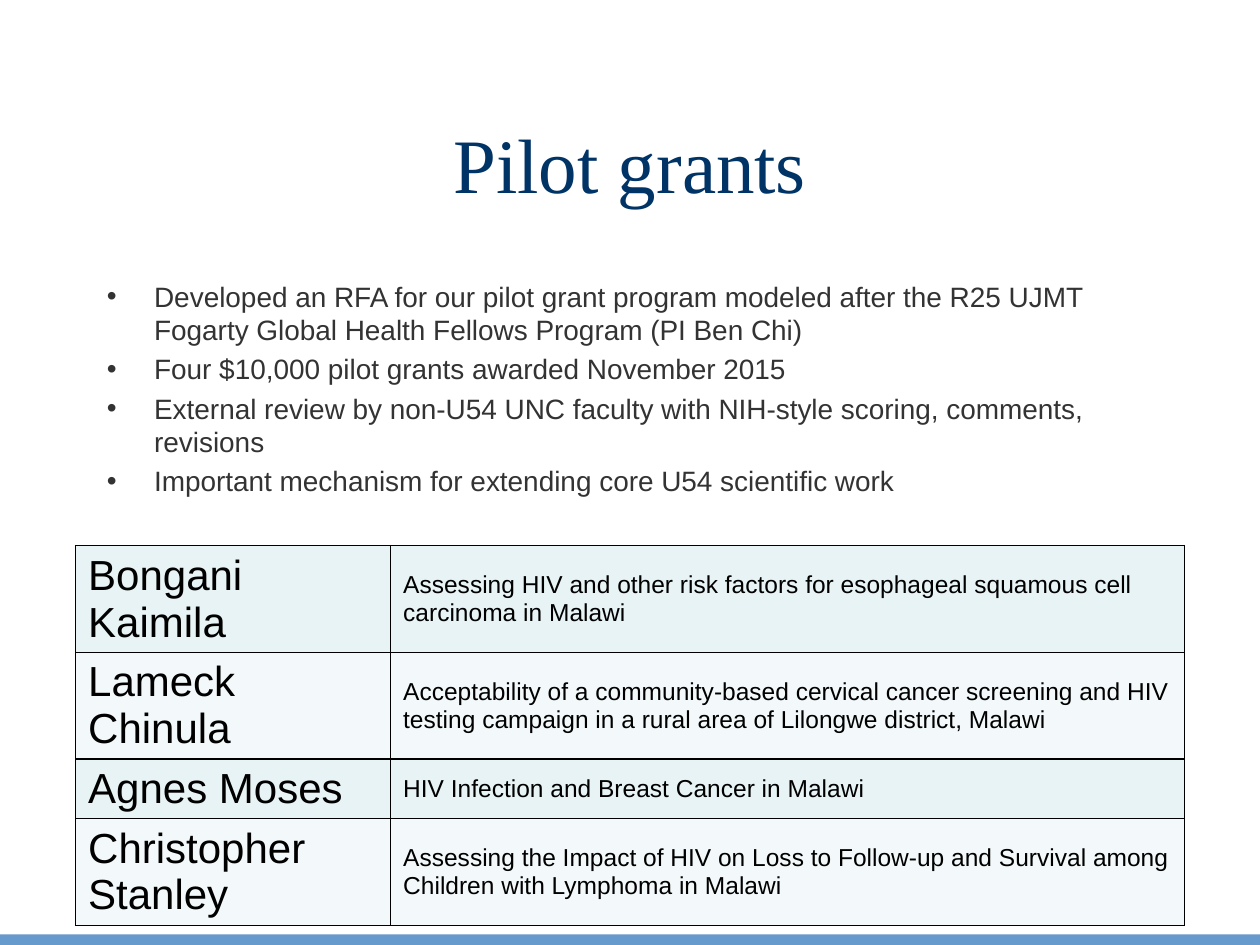
from lxml import etree
from pptx import Presentation
from pptx.dml.color import RGBColor
from pptx.enum.shapes import MSO_SHAPE
from pptx.enum.text import MSO_ANCHOR, PP_ALIGN
from pptx.oxml.ns import qn
from pptx.util import Pt

RECTANGLE = MSO_SHAPE.RECTANGLE
MIDDLE = MSO_ANCHOR.MIDDLE
CENTER = PP_ALIGN.CENTER
TITLE_ONLY = 5

WIDTH, HEIGHT = 720, 540
GOALS = [
    "Developed an RFA for our pilot grant program modeled after the R25 UJMT "
    "Fogarty Global Health Fellows Program (PI Ben Chi)",
    "Four $10,000 pilot grants awarded November 2015",
    "External review by non-U54 UNC faculty with NIH-style scoring, comments, revisions",
    "Important mechanism for extending core U54 scientific work",
]
GRANTS = [
    ("Bongani Kaimila",
     "Assessing HIV and other risk factors for esophageal squamous cell carcinoma in Malawi"),
    ("Lameck Chinula",
     "Acceptability of a community-based cervical cancer screening and HIV testing "
     "campaign in a rural area of Lilongwe district, Malawi"),
    ("Agnes Moses", "HIV Infection and Breast Cancer in Malawi"),
    ("Christopher Stanley",
     "Assessing the Impact of HIV on Loss to Follow-up and Survival among Children "
     "with Lymphoma in Malawi"),
]


def color(hex_string):
    return RGBColor.from_string(hex_string)


def add_solid_fill(parent, hex_string):
    fill = etree.SubElement(parent, qn("a:solidFill"))
    etree.SubElement(fill, qn("a:srgbClr"), val=hex_string)


class GrantSlide:
    title_font, body_font = "Times New Roman", "Arial"
    title_color, body_color, table_color = "003366", "333333", "000000"
    bar_color = "6699CC"
    row_fills = ("E7F3F4", "F3F9FA")
    cell_margin = 1.5

    def __init__(self, presentation):
        self.slide = presentation.slides.add_slide(presentation.slide_layouts[TITLE_ONLY])

    def style(self, paragraph, font_name, size, hex_string):
        for run in paragraph.runs:
            run.font.name = font_name
            run.font.size = Pt(size)
            run.font.color.rgb = color(hex_string)

    def bar(self, left, top, width, height):
        bar = self.slide.shapes.add_shape(RECTANGLE, Pt(left), Pt(top), Pt(width), Pt(height))
        bar.shadow.inherit = False
        bar.fill.solid()
        bar.fill.fore_color.rgb = color(self.bar_color)
        bar.line.fill.background()

    def title(self, text, left, top, width, height):
        title = self.slide.shapes.title
        title.left, title.top, title.width, title.height = map(Pt, (left, top, width, height))
        title.text_frame.text = text
        title.text_frame.vertical_anchor = MIDDLE
        heading = title.text_frame.paragraphs[0]
        heading.alignment = CENTER
        self.style(heading, self.title_font, 44, self.title_color)

    def bullets(self, items, left, top, width, height):
        box = self.slide.shapes.add_textbox(Pt(left), Pt(top), Pt(width), Pt(height))
        frame = box.text_frame
        frame.word_wrap = True
        frame.text = "\n".join(items)
        for index, paragraph in enumerate(frame.paragraphs):
            properties = paragraph._p.get_or_add_pPr()
            properties.set("marL", str(Pt(27)))
            properties.set("indent", str(Pt(-27)))
            if index:
                paragraph.space_before = Pt(3.2)
            etree.SubElement(properties, qn("a:buFont"), typeface=self.body_font)
            etree.SubElement(properties, qn("a:buChar"), char="•")
            self.style(paragraph, self.body_font, 16, self.body_color)

    def cell(self, cell, text, size, fill):
        cell.text_frame.text = text
        cell.vertical_anchor = MIDDLE
        cell.margin_top = cell.margin_bottom = Pt(self.cell_margin)
        self.style(cell.text_frame.paragraphs[0], self.body_font, size, self.table_color)
        properties = cell._tc.get_or_add_tcPr()
        for side in ("a:lnL", "a:lnR", "a:lnT", "a:lnB"):
            border = etree.SubElement(properties, qn(side), w=str(Pt(1)))
            add_solid_fill(border, self.table_color)
        cell.fill.solid()
        cell.fill.fore_color.rgb = color(fill)

    def table(self, rows, left, top, column_widths, row_heights, column_sizes):
        table = self.slide.shapes.add_table(
            len(rows), len(column_widths), Pt(left), Pt(top),
            Pt(sum(column_widths)), Pt(sum(row_heights))).table
        for column, width in zip(table.columns, column_widths):
            column.width = Pt(width)
        for index, (row, height) in enumerate(zip(table.rows, row_heights)):
            row.height = Pt(height)
            fill = self.row_fills[index % 2]
            for cell, text, size in zip(row.cells, rows[index], column_sizes):
                self.cell(cell, text, size, fill)


def main():
    presentation = Presentation()
    presentation.slide_width, presentation.slide_height = Pt(WIDTH), Pt(HEIGHT)
    grants = GrantSlide(presentation)
    grants.bar(0, HEIGHT - 6, WIDTH, 6)
    grants.title("Pilot grants", 54, 48, 612, 90)
    grants.bullets(GOALS, 54, 156, 612, 306)
    grants.table(GRANTS, 43.2, 311.8, column_widths=(180, 453.6),
                 row_heights=(61, 61, 34, 61), column_sizes=(24, 14))
    presentation.save("out.pptx")


if __name__ == "__main__":
    main()
